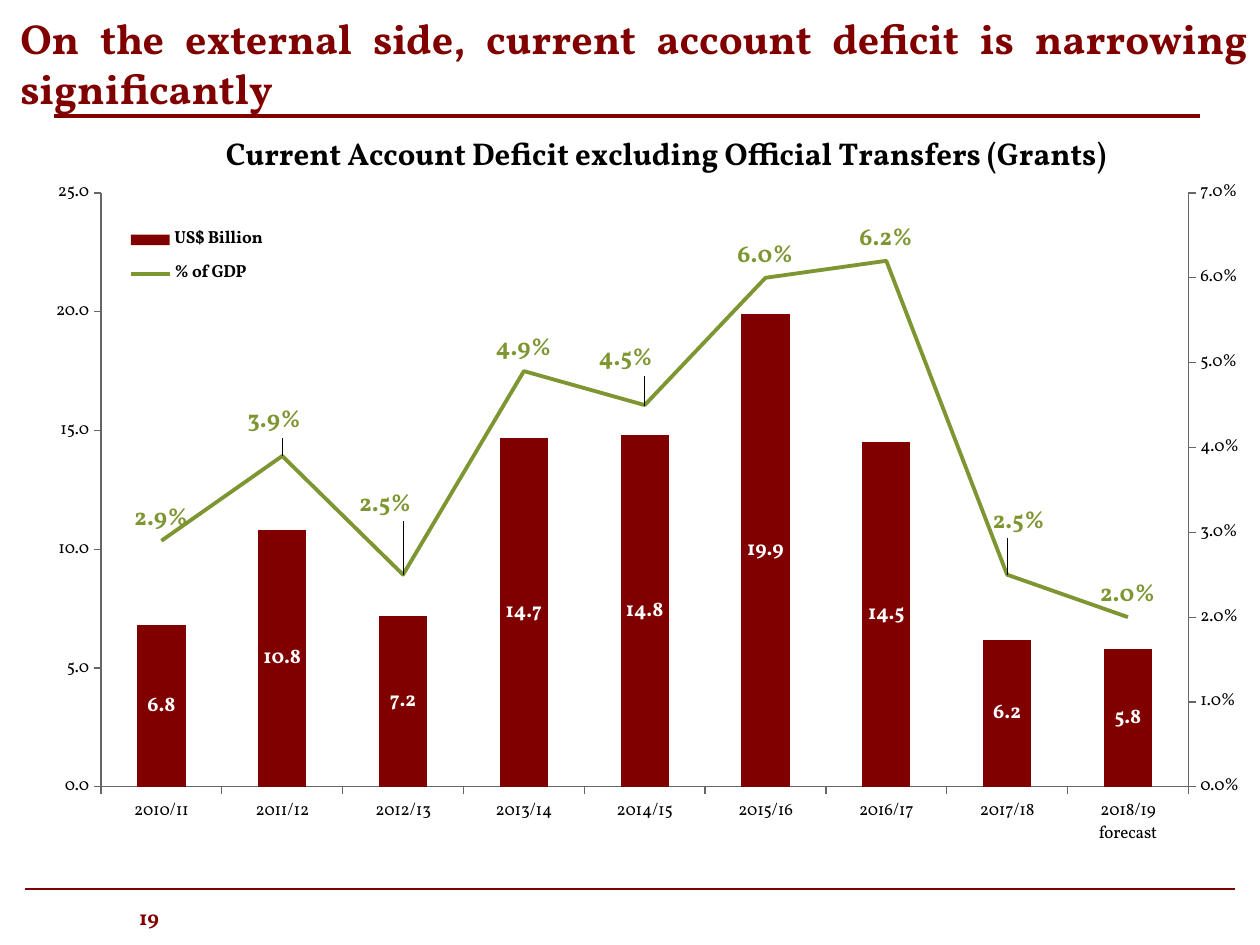
from copy import deepcopy
from dataclasses import dataclass
from lxml.etree import SubElement
from pptx import Presentation
from pptx.chart.axis import CategoryAxis, ValueAxis
from pptx.chart.data import CategoryChartData
from pptx.dml.color import RGBColor
from pptx.enum.chart import XL_CHART_TYPE, XL_LABEL_POSITION, XL_LEGEND_POSITION, XL_TICK_MARK
from pptx.enum.shapes import MSO_CONNECTOR
from pptx.enum.text import MSO_ANCHOR, MSO_AUTO_SIZE, PP_ALIGN
from pptx.oxml import parse_xml
from pptx.oxml.ns import nsdecls, qn
from pptx.util import Emu, Pt


@dataclass(frozen=True)
class Theme:
    font: str = "Vollkorn"
    maroon: str = "800000"
    green: str = "7E9632"
    black: str = "000000"
    white: str = "FFFFFF"
    axis: str = "666666"
    heading: int = 24
    chart_title: int = 18
    percent: int = 14
    label: int = 12
    small: int = 10


T = Theme()
HEADING = "On the external side, current account deficit is narrowing significantly"
PAGE = "19"
CHART_TITLE = "Current Account Deficit excluding Official Transfers (Grants)"
YEARS = ["2010/11", "2011/12", "2012/13", "2013/14", "2014/15",
         "2015/16", "2016/17", "2017/18", "2018/19\nforecast"]
BILLIONS = ("US$ Billion", [6.8, 10.8, 7.2, 14.7, 14.8, 19.9, 14.5, 6.2, 5.8], "0.0")
GDP = ("% of GDP", [0.029, 0.039, 0.025, 0.049, 0.045, 0.06, 0.062, 0.025, 0.02], "0.0%")
LABEL_SHIFTS = {1: (-8, -13), 2: (-18, -48), 4: (-19, -24), 7: (12, -31)}

RULES = [(54, 1200, 116, 2), (25, 1235, 889, 0.75)]
HEADING_BOX = (8, 6, 1252, 115)
PAGE_BOX = (54, 900, 105, 30)
CHART_BOX = (21, 118, 1218, 753)
PLOT_BOX = (82, 75, 1113, 594)
LEGEND_BOX = (107, 100, 146, 78)
TITLE_AT = (204, 8)


def px(n):
    return Emu(round(n * 914400 / 126))


def style(font, size, color, bold=True):
    font.name, font.size, font.bold = T.font, Pt(size), bold
    font.color.rgb = RGBColor.from_string(color)


def paint(fill, color):
    fill.solid()
    fill.fore_color.rgb = RGBColor.from_string(color)


def add_rule(s, x1, x2, y, width):
    c = s.shapes.add_connector(MSO_CONNECTOR.STRAIGHT, px(x1), px(y), px(x2), px(y))
    c.line.color.rgb = RGBColor.from_string(T.maroon)
    c.line.width = Pt(width)
    SubElement(c._element.spPr, qn("a:effectLst"))


def add_text(s, box, text, size, align):
    sp = s.shapes.add_textbox(*map(px, box))
    tf = sp.text_frame
    tf.word_wrap = True
    tf.text = text
    p = tf.paragraphs[0]
    p.alignment = align
    style(p.runs[0].font, size, T.maroon)
    return tf


def layout(box, inner=False, modes=True):
    parts = ['<c:layoutTarget val="inner"/>'] if inner else []
    if modes:
        parts += ['<c:xMode val="edge"/>', '<c:yMode val="edge"/>']
    sizes = CHART_BOX[2:] * 2
    parts += [f'<c:{k} val="{n / size:.4f}"/>' for k, n, size in zip("xywh", box, sizes)]
    return parse_xml(f'<c:layout {nsdecls("c")}><c:manualLayout>'
                     f'{"".join(parts)}</c:manualLayout></c:layout>')


def place(parent, new, after):
    for old in parent.findall(qn("c:layout")):
        parent.remove(old)
    if after is None:
        parent.insert(0, new)
    else:
        parent.find(qn(after)).addnext(new)


def format_axis(axis):
    axis.has_major_gridlines = False
    axis.major_tick_mark = XL_TICK_MARK.OUTSIDE
    axis.minor_tick_mark = XL_TICK_MARK.NONE
    axis.format.line.color.rgb = RGBColor.from_string(T.axis)
    axis.format.line.width = Pt(0.75)
    style(axis.tick_labels.font, T.small, T.black, False)


def scale(axis, top, unit, fmt):
    axis.minimum_scale, axis.maximum_scale, axis.major_unit = 0, top, unit
    axis.tick_labels.number_format = fmt
    axis.tick_labels.number_format_is_linked = False


def split_line(chart):
    bar = chart.plots[0]._element
    ser = bar.findall(qn("c:ser"))[1]
    for el in ser.findall(qn("c:invertIfNegative")):
        ser.remove(el)
    line = parse_xml(f'<c:lineChart {nsdecls("c")}><c:grouping val="standard"/>'
                     '<c:varyColors val="0"/><c:marker val="1"/>'
                     '<c:axId val="5001"/><c:axId val="5002"/></c:lineChart>')
    line.insert(2, ser)
    bar.addnext(line)
    val = chart.value_axis._element
    right, hidden = deepcopy(val), deepcopy(chart.category_axis._element)
    val.addnext(right)
    right.addnext(hidden)
    for el, own, cross in ((right, "5002", "5001"), (hidden, "5001", "5002")):
        el.find(qn("c:axId")).set("val", own)
        el.find(qn("c:crossAx")).set("val", cross)
    right.find(qn("c:axPos")).set("val", "r")
    right.find(qn("c:crosses")).set("val", "max")
    CategoryAxis(hidden).visible = False
    scale(ValueAxis(right), 0.07, 0.01, GDP[2])


def label_series(series, fmt, size, color, position):
    d = series.data_labels
    d.show_value = True
    d.number_format, d.number_format_is_linked = fmt, False
    d.position = position
    style(d.font, size, color)


def add_combo(s):
    data = CategoryChartData()
    data.categories = YEARS
    for name, values, fmt in (BILLIONS, GDP):
        data.add_series(name, values, number_format=fmt)
    chart = s.shapes.add_chart(XL_CHART_TYPE.COLUMN_CLUSTERED,
                               *map(px, CHART_BOX), data).chart
    style(chart.font, T.small, T.black, False)

    chart.has_title = True
    tf = chart.chart_title.text_frame
    tf.text = CHART_TITLE
    style(tf.paragraphs[0].runs[0].font, T.chart_title, T.black)
    place(chart.chart_title._element, layout(TITLE_AT), "c:tx")
    chart.chart_title.include_in_layout = False

    chart.has_legend = True
    chart.legend.position = XL_LEGEND_POSITION.TOP
    chart.legend.include_in_layout = False
    style(chart.legend.font, T.small, T.black)
    place(chart.legend._element, layout(LEGEND_BOX), "c:legendPos")

    for axis in (chart.category_axis, chart.value_axis):
        format_axis(axis)
    scale(chart.value_axis, 25, 5, BILLIONS[2])
    split_line(chart)
    place(chart._chartSpace.chart.plotArea, layout(PLOT_BOX, inner=True), None)

    bars, line = chart.plots
    bars.gap_width = 150
    bars.vary_by_categories = False
    columns, trend = bars.series[0], line.series[0]
    paint(columns.format.fill, T.maroon)
    label_series(columns, BILLIONS[2], T.label, T.white, XL_LABEL_POSITION.CENTER)
    trend.smooth = False
    trend.marker.style = None
    trend.marker._element.get_or_add_marker().get_or_add_symbol().set("val", "none")
    trend.format.line.color.rgb = RGBColor.from_string(T.green)
    trend.format.line.width = Pt(2.25)
    label_series(trend, GDP[2], T.percent, T.green, XL_LABEL_POSITION.ABOVE)
    for i, shift in LABEL_SHIFTS.items():
        label = trend.points[i].data_label
        style(label.font, T.percent, T.green)
        label.position = XL_LABEL_POSITION.ABOVE
    for el in trend._element.iter(qn("c:dLbl")):
        shift = LABEL_SHIFTS[int(el.find(qn("c:idx")).get("val"))]
        place(el, layout(shift, modes=False), "c:idx")
        el.find(qn("c:layout")).addnext(parse_xml(
            f'<c:numFmt {nsdecls("c")} formatCode="{GDP[2]}" sourceLinked="0"/>'))


def main():
    prs = Presentation()
    prs.slide_width, prs.slide_height = px(1260), px(945)
    s = prs.slides.add_slide(prs.slide_layouts[6])
    for rule in RULES:
        add_rule(s, *rule)
    tf = add_text(s, PAGE_BOX, PAGE, T.label, PP_ALIGN.RIGHT)
    tf.margin_left = tf.margin_right = tf.margin_top = tf.margin_bottom = 0
    tf.vertical_anchor = MSO_ANCHOR.BOTTOM
    tf = add_text(s, HEADING_BOX, HEADING, T.heading, PP_ALIGN.JUSTIFY)
    tf.auto_size = MSO_AUTO_SIZE.SHAPE_TO_FIT_TEXT
    add_combo(s)
    prs.save("out.pptx")


if __name__ == "__main__":
    main()
